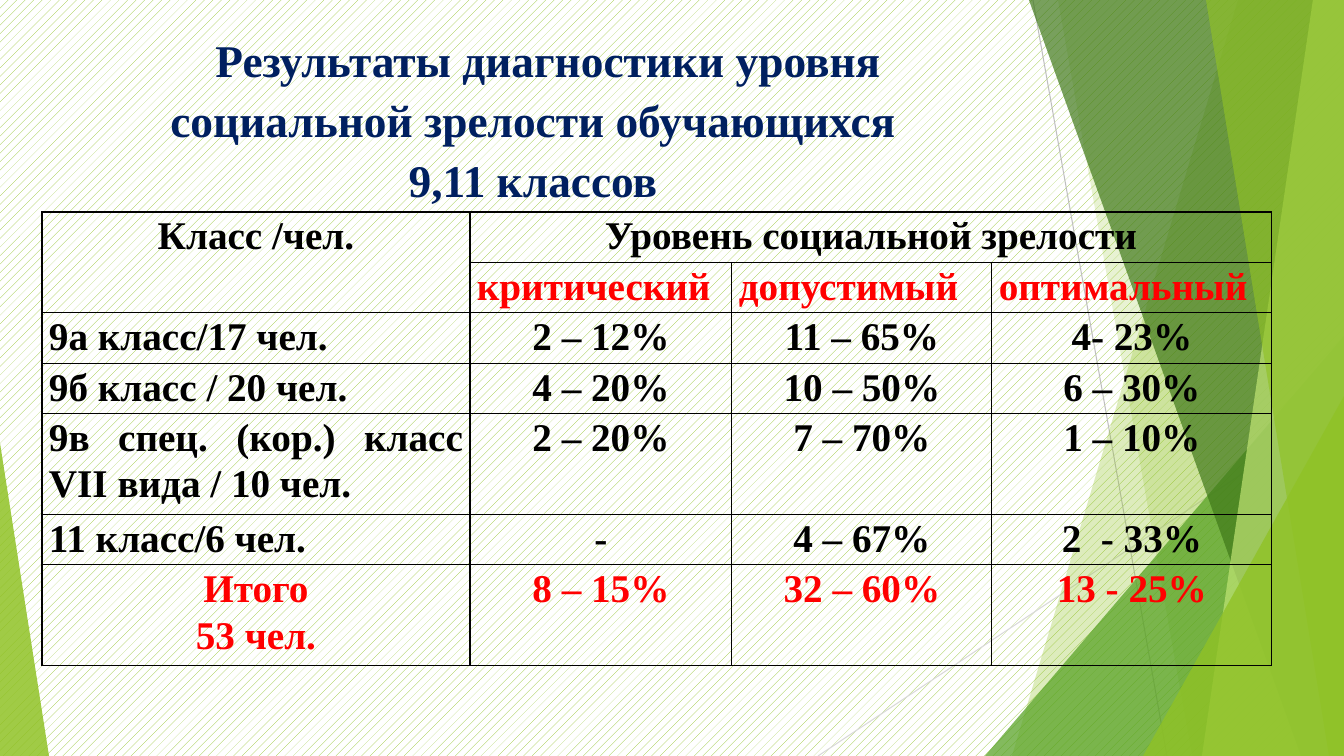
from lxml import etree
from pptx import Presentation, util as u
from pptx.dml.color import RGBColor
from pptx.enum import dml, shapes, text
from pptx.oxml.ns import qn

WIDE, HIGH = 1344, 756
SCALE = 12192000 / WIDE
FONT = "Times New Roman"
INK = {"lime": "90C226", "leaf": "54A021", "moss": "3F7819", "pale": "C0E474",
       "white": "FFFFFF", "grey": "BFBFBF", "mist": "D9D9D9",
       "navy": "002060", "black": "000000", "red": "FF0000"}

TITLE = "Результаты диагностики уровня\vсоциальной зрелости обучающихся\v9,11 классов"
ROWS = [
    ["Класс /чел.", "Уровень социальной зрелости", "", ""],
    ["", "критический", "допустимый", "оптимальный"],
    ["9а класс/17 чел.", "2 – 12%", "11 – 65%", "4- 23%"],
    ["9б класс / 20 чел.", "4 – 20%", "10 – 50%", "6 – 30%"],
    ["9в спец. (кор.) класс VII вида / 10 чел.", "2 – 20%", "7 – 70%", "1 – 10%"],
    ["11 класс/6 чел.", "-", "4 – 67%", "2  - 33%"],
    ["Итого\n53 чел.", "8 – 15%", "32 – 60%", "13 - 25%"],
]
COLS = [428, 262, 260, 280]
TALL = [47, 47, 47, 47, 95, 47, 95]


def px(n):
    return u.Emu(round(n * SCALE))


def rgb(name):
    return RGBColor.from_string(INK[name])


def paint(shape, ink, alpha):
    shape.shadow.inherit = False
    shape.line.fill.background()
    shape.fill.solid()
    shape.fill.fore_color.rgb = rgb(ink)
    color = shape.fill._xPr.find(".//" + qn("a:srgbClr"))
    etree.SubElement(color, qn("a:alpha")).set("val", str(alpha * 1000))


def style(para, size, ink, align, space):
    para.alignment = align
    para.line_spacing = space
    font = para.font
    font.name, font.size, font.bold = FONT, u.Pt(size), True
    font.color.rgb = rgb(ink)


def line(slide, x1, y1, x2, y2, ink):
    link = slide.shapes.add_connector(
        shapes.MSO_CONNECTOR.STRAIGHT, px(x1), px(y1), px(x2), px(y2))
    link.line.color.rgb = rgb(ink)
    link.line.width = u.Pt(0.75)
    etree.SubElement(link._element.spPr, qn("a:effectLst"))


def band(slide, top, foot, ink, alpha):
    """Facet from the right edge to a slanted left side."""
    form = slide.shapes.build_freeform(px(top), 0)
    form.add_line_segments(
        [(px(WIDE), 0), (px(WIDE), px(HIGH)), (px(foot), px(HIGH))], close=True)
    paint(form.convert_to_shape(), ink, alpha)


def wedge(slide, x, wide, high, apex, ink, alpha):
    """Right triangle standing on the bottom edge."""
    shape = slide.shapes.add_shape(
        shapes.MSO_SHAPE.ISOSCELES_TRIANGLE, px(x), px(HIGH - high), px(wide), px(high))
    shape.adjustments[0] = apex
    paint(shape, ink, alpha)


def decor(slide):
    # Hatched background
    fill = slide.background.fill
    fill.patterned()
    fill.pattern = dml.MSO_PATTERN.PERCENT_20
    fill.fore_color.rgb = rgb("lime")
    fill.back_color.rgb = rgb("white")
    # Thin lines, then facets from back to front
    line(slide, 1033, 0, 1167, HIGH, "grey")
    line(slide, WIDE, 406, 818, HIGH, "mist")
    band(slide, 1238, 1012, "lime", 30)
    band(slide, 1058, 1192, "lime", 20)
    wedge(slide, 985, 359, 420, 1, "leaf", 72)
    band(slide, 1029, 1301, "moss", 70)
    band(slide, 1313, 1202, "pale", 70)
    band(slide, 1206, 1329, "lime", 65)
    wedge(slide, 1143, 201, 360, 1, "lime", 80)
    wedge(slide, 0, 49, 313, 0, "lime", 85)


def title(slide, x, y, wide, high):
    frame = slide.shapes.add_textbox(px(x), px(y), px(wide), px(high)).text_frame
    frame.word_wrap = True
    frame.vertical_anchor = text.MSO_ANCHOR.BOTTOM
    para = frame.paragraphs[0]
    para.text = TITLE
    para._p.get_or_add_pPr().set("indent", str(px(30)))
    style(para, 32.4, "navy", text.PP_ALIGN.CENTER, 1.11)


def border(cell):
    props = cell._tc.get_or_add_tcPr()
    for at, side in enumerate(("lnL", "lnR", "lnT", "lnB")):
        edge = etree.Element(qn("a:" + side), w=str(u.Pt(1)))
        fill = etree.SubElement(edge, qn("a:solidFill"))
        etree.SubElement(fill, qn("a:srgbClr"), val=INK["black"])
        props.insert(at, edge)


def table(slide, x, y):
    grid = slide.shapes.add_table(
        len(TALL), len(COLS), px(x), px(y), px(sum(COLS)), px(sum(TALL))).table
    grid.first_row = grid.horz_banding = False
    for col, wide in zip(grid.columns, COLS):
        col.width = px(wide)
    for row, high in zip(grid.rows, TALL):
        row.height = px(high)
    # Levels and totals are red; levels and class names are justified
    last = len(ROWS) - 1
    for r, row in enumerate(ROWS):
        for c, words in enumerate(row):
            cell = grid.cell(r, c)
            cell.fill.background()
            cell.margin_left = cell.margin_right = px(7)
            cell.margin_top = cell.margin_bottom = 0
            border(cell)
            cell.text = words
            ink = "red" if r in (1, last) else "black"
            just = r == 1 or (c == 0 and 1 < r < last)
            align = text.PP_ALIGN.JUSTIFY if just else text.PP_ALIGN.CENTER
            for para in cell.text_frame.paragraphs:
                style(para, 28, ink, align, 1.07)
    grid.cell(0, 0).merge(grid.cell(1, 0))
    grid.cell(0, 1).merge(grid.cell(0, 3))


def main():
    deck = Presentation()
    deck.slide_width, deck.slide_height = px(WIDE), px(HIGH)
    slide = deck.slides.add_slide(deck.slide_layouts[6])
    decor(slide)
    title(slide, 59, 24, 948, 188)
    table(slide, 42, 212)
    deck.save("out.pptx")


if __name__ == "__main__":
    main()
